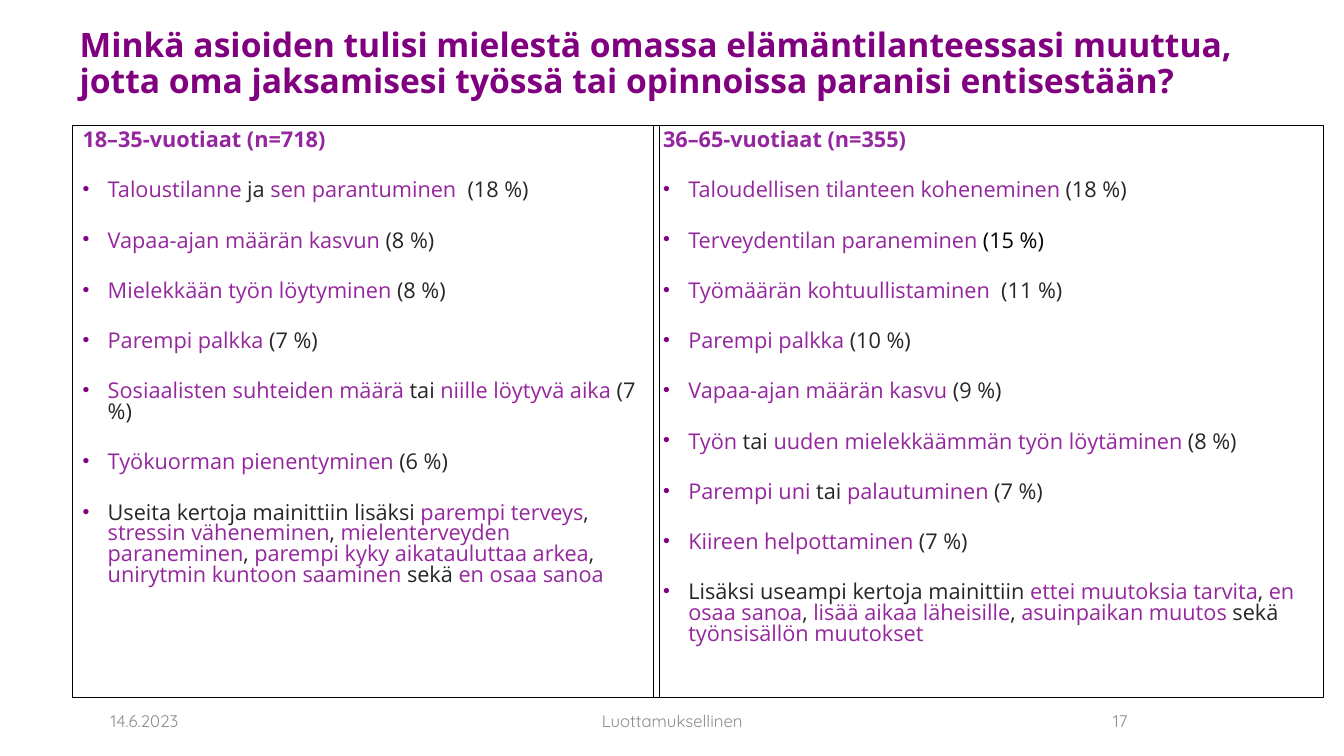
import pptx
import pptx.dml.color
import pptx.enum.shapes
import pptx.enum.text
import pptx.oxml
import pptx.util
from pptx.oxml.ns import nsdecls

Pt = pptx.util.Pt
ALIGN = pptx.enum.text.PP_ALIGN
ANCHOR = pptx.enum.text.MSO_ANCHOR

HEADING_PURPLE = "800080"
ANSWER_PURPLE = "95279E"
DARK = "262626"
BLACK = "000000"
FOOTER_GREY = "8C8C8C"

QUESTION = (
    "Minkä asioiden tulisi mielestä omassa elämäntilanteessasi muuttua, "
    "jotta oma jaksamisesi työssä tai opinnoissa paranisi entisestään?"
)

# Within an answer, | switches between purple and dark text, purple first.
YOUNGER_ANSWERS = [
    "Taloustilanne| ja |sen parantuminen|  (18 %)",
    "Vapaa-ajan määrän kasvun| (8 %)",
    "Mielekkään työn löytyminen| (8 %)",
    "Parempi palkka |(7 %)",
    "Sosiaalisten suhteiden määrä |tai |niille löytyvä aika |(7 %)",
    "Työkuorman pienentyminen |(6 %)",
    "|Useita kertoja mainittiin lisäksi |parempi terveys|, |stressin väheneminen|, "
    "|mielenterveyden paraneminen|, |parempi kyky aikatauluttaa arkea|, "
    "|unirytmin kuntoon saaminen |sekä |en osaa sanoa",
]
OLDER_ANSWERS = [
    "Taloudellisen tilanteen koheneminen |(18 %)",
    "Terveydentilan paraneminen |(15 %)",
    "Työmäärän kohtuullistaminen | (11 %)",
    "Parempi palkka |(10 %)",
    "Vapaa-ajan määrän kasvu |(9 %)",
    "Työn| tai |uuden mielekkäämmän työn löytäminen |(8 %)",
    "Parempi uni |tai |palautuminen| (7 %)",
    "Kiireen helpottaminen |(7 %)",
    "|Lisäksi useampi kertoja mainittiin |ettei muutoksia tarvita|, |en osaa sanoa|, "
    "|lisää aikaa läheisille|, |asuinpaikan muutos |sekä |työnsisällön muutokset",
]
BLACK_SHARES = {"(15 %)"}

# Left, width, heading, answers
AGE_GROUPS = [
    (51.84, 419.04, "18–35-vuotiaat (n=718)", YOUNGER_ANSWERS),
    (466.56, 478.8, "36–65-vuotiaat (n=355)", OLDER_ANSWERS),
]
# Left, width, text, alignment
FOOTERS = [
    (72, 200.16, "14.6.2023", ALIGN.LEFT),
    (328.32, 303.84, "Luottamuksellinen", ALIGN.CENTER),
    (688.32, 223.92, "17", ALIGN.CENTER),
]


def rgb(hex_colour):
    return pptx.dml.color.RGBColor.from_string(hex_colour)


def apply(target, formats):
    for attribute, value in formats.items():
        setattr(target, attribute, value)


def add_run(paragraph, text, colour, size, font="Open Sans", bold=False):
    run = paragraph.add_run()
    run.text = text
    apply(run.font, {"name": font, "size": Pt(size), "bold": bold})
    run.font.color.rgb = rgb(colour)


def add_bullet(paragraph):
    properties = paragraph._p.get_or_add_pPr()
    apply_indent = {"marL": "228600", "indent": "-228600"}
    for attribute, value in apply_indent.items():
        properties.set(attribute, value)
    for markup in (
        f'<a:buClr {nsdecls("a")}><a:srgbClr val="{HEADING_PURPLE}"/></a:buClr>',
        f'<a:buSzPct {nsdecls("a")} val="90000"/>',
        f'<a:buFont {nsdecls("a")} typeface="Arial"/>',
        f'<a:buChar {nsdecls("a")} char="•"/>',
    ):
        properties.append(pptx.oxml.parse_xml(markup))


def add_question(slide):
    title = slide.shapes.title
    apply(title, {"left": Pt(49.68), "top": Pt(13.68),
                  "width": Pt(864.72), "height": Pt(61.92)})
    apply(title.text_frame, {"word_wrap": True, "vertical_anchor": ANCHOR.BOTTOM,
                             "auto_size": pptx.enum.text.MSO_AUTO_SIZE.NONE})
    paragraph = title.text_frame.paragraphs[0]
    apply(paragraph, {"alignment": ALIGN.LEFT, "line_spacing": 0.9, "space_before": Pt(0)})
    add_run(paragraph, QUESTION, HEADING_PURPLE, 24, bold=True)


def add_answer(frame, answer):
    paragraph = frame.add_paragraph()
    add_bullet(paragraph)
    apply(paragraph, {"alignment": ALIGN.LEFT, "line_spacing": 0.8, "space_before": Pt(21)})
    for index, segment in enumerate(answer.split("|")):
        if segment in BLACK_SHARES:
            colour = BLACK
        else:
            colour = DARK if index % 2 else ANSWER_PURPLE
        if segment:
            add_run(paragraph, segment, colour, 15.5)


def add_age_group(slide, left, width, heading, answers):
    panel = slide.shapes.add_shape(
        pptx.enum.shapes.MSO_SHAPE.RECTANGLE, Pt(left), Pt(90), Pt(width), Pt(408.24)
    )
    panel.shadow.inherit = False
    panel.fill.background()
    panel.line.color.rgb = rgb(BLACK)
    panel.line.width = Pt(0.75)
    frame = panel.text_frame
    apply(frame, {"word_wrap": True, "vertical_anchor": ANCHOR.TOP})
    apply(frame.paragraphs[0], {"alignment": ALIGN.LEFT, "line_spacing": 0.8})
    add_run(frame.paragraphs[0], heading, ANSWER_PURPLE, 15.5, bold=True)
    for answer in answers:
        add_answer(frame, answer)


def add_footer(slide, left, width, text, alignment):
    footer = slide.shapes.add_textbox(Pt(left), Pt(500.4), Pt(width), Pt(28.8))
    frame = footer.text_frame
    apply(frame, {"word_wrap": True, "vertical_anchor": ANCHOR.MIDDLE})
    frame.paragraphs[0].alignment = alignment
    add_run(frame.paragraphs[0], text, FOOTER_GREY, 12, font="Quicksand")


def main():
    deck = pptx.Presentation()
    apply(deck, {"slide_width": Pt(960), "slide_height": Pt(540)})
    slide = deck.slides.add_slide(deck.slide_layouts.get_by_name("Title Only"))
    add_question(slide)
    for group in AGE_GROUPS:
        add_age_group(slide, *group)
    for footer in FOOTERS:
        add_footer(slide, *footer)
    deck.save("out.pptx")


if __name__ == "__main__":
    main()
